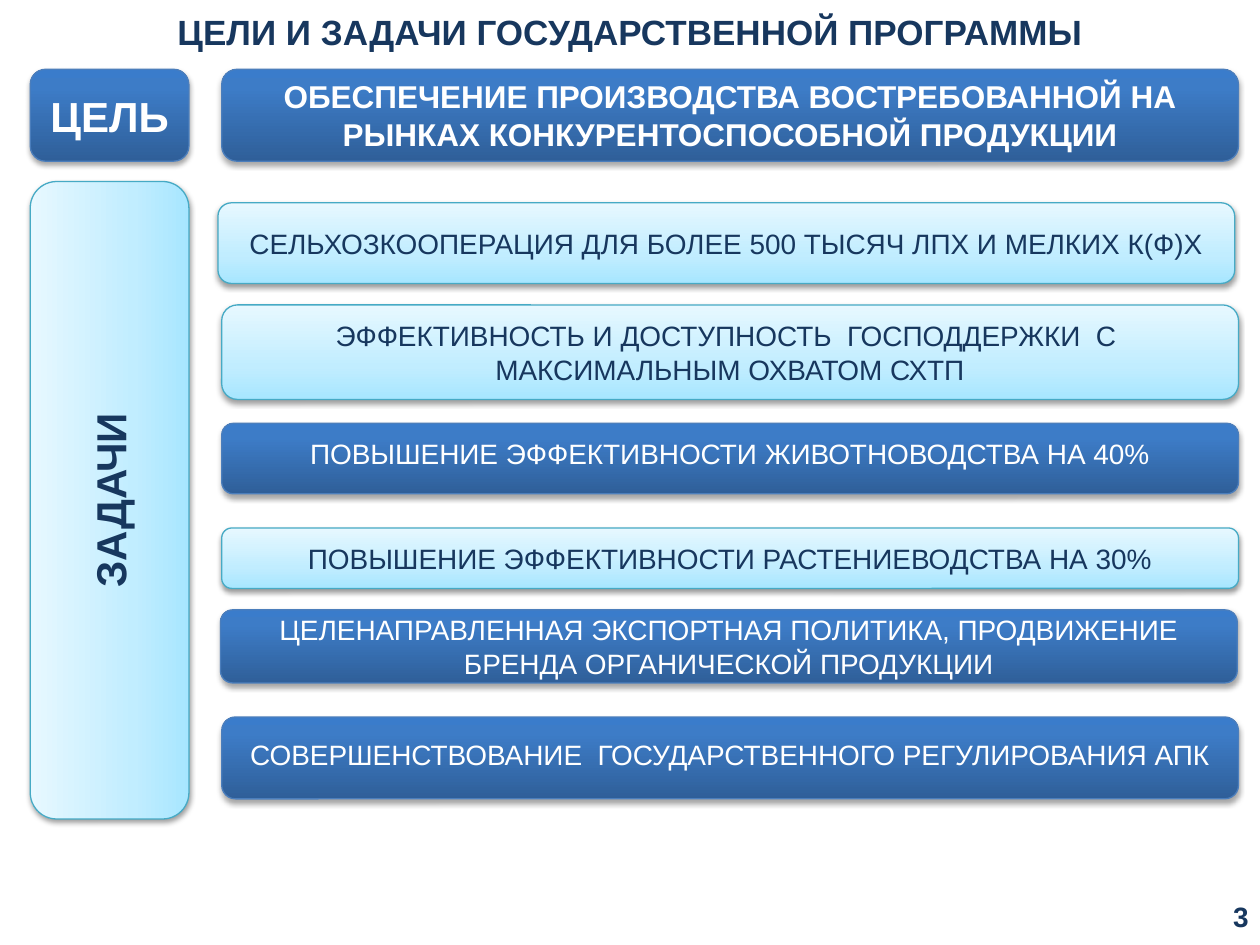
from lxml.etree import SubElement
from pptx import Presentation
from pptx.dml.color import RGBColor
from pptx.enum.shapes import MSO_SHAPE
from pptx.enum.text import MSO_ANCHOR, PP_ALIGN
from pptx.oxml import parse_xml
from pptx.oxml.ns import nsdecls, qn
from pptx.util import Inches, Pt

COLORS = {"navy": "17375E", "white": "FFFFFF", "shadow": "000000"}

# Gradient stops run from the bottom edge to the top edge
STYLES = {
    "blue": {"stops": [(0, "2F5F99"), (80, "3D7CC7"), (100, "3A7CCB")],
             "line": "4B7EBC", "text": COLORS["white"], "alpha": 35, "dist": 1.8},
    "light": {"stops": [(0, "A7E6FF"), (35, "C1EDFF"), (100, "E7F8FF")],
              "line": "46AAC5", "text": COLORS["navy"], "alpha": 38, "dist": 1.6},
}

BAR_LEFT, BAR_WIDTH = 1.76, 8.07
LABEL_LEFT, LABEL_WIDTH = 0.24, 1.26
GOAL_TOP, GOAL_HEIGHT = 0.55, 0.73
TASKS_TOP, TASKS_HEIGHT = 1.44, 5.06

# left, top, height, style, line spacing, text
TASKS = [
    (1.73, 1.61, 0.64, "light", None,
     "СЕЛЬХОЗКООПЕРАЦИЯ ДЛЯ БОЛЕЕ 500 ТЫСЯЧ ЛПХ И МЕЛКИХ К(Ф)Х"),
    (BAR_LEFT, 2.42, 0.75, "light", None,
     "ЭФФЕКТИВНОСТЬ И ДОСТУПНОСТЬ  ГОСПОДДЕРЖКИ  С  МАКСИМАЛЬНЫМ ОХВАТОМ СХТП"),
    (BAR_LEFT, 3.36, 0.56, "blue", Pt(13.7),
     "ПОВЫШЕНИЕ ЭФФЕКТИВНОСТИ ЖИВОТНОВОДСТВА НА 40%"),
    (BAR_LEFT, 4.19, 0.48, "light", None,
     "ПОВЫШЕНИЕ ЭФФЕКТИВНОСТИ РАСТЕНИЕВОДСТВА НА 30%"),
    (1.75, 4.84, 0.58, "blue", 1.01,
     "ЦЕЛЕНАПРАВЛЕННАЯ ЭКСПОРТНАЯ ПОЛИТИКА, ПРОДВИЖЕНИЕ БРЕНДА ОРГАНИЧЕСКОЙ ПРОДУКЦИИ"),
    (BAR_LEFT, 5.69, 0.65, "blue", 0.74,
     "СОВЕРШЕНСТВОВАНИЕ  ГОСУДАРСТВЕННОГО РЕГУЛИРОВАНИЯ АПК"),
]


def write_text(sp, text, size, color, bold=False, align=PP_ALIGN.CENTER):
    tf = sp.text_frame
    tf.word_wrap = True
    tf.vertical_anchor = MSO_ANCHOR.MIDDLE
    p = tf.paragraphs[0]
    p.text = text
    p.alignment = align
    p.font.name = "Arial"
    p.font.size = Pt(size)
    p.font.bold = bold
    p.font.color.rgb = RGBColor.from_string(color)
    return p


def apply_style(sp, style):
    sp.line.color.rgb = RGBColor.from_string(style["line"])
    sp.line.width = Pt(0.75)
    # Gradient fill
    stops = "".join(f'<a:gs pos="{pos * 1000}"><a:srgbClr val="{color}"/></a:gs>'
                    for pos, color in style["stops"])
    spPr = sp._element.spPr
    spPr.find(qn("a:ln")).addprevious(parse_xml(
        f'<a:gradFill rotWithShape="1" {nsdecls("a")}><a:gsLst>{stops}</a:gsLst>'
        '<a:lin ang="16200000" scaled="0"/></a:gradFill>'))
    # Soft shadow below
    sp.shadow.inherit = False
    shadow = SubElement(spPr.find(qn("a:effectLst")), qn("a:outerShdw"),
                        blurRad=str(Pt(3.1)), dist=str(Pt(style["dist"])),
                        dir="5400000", rotWithShape="0")
    color = SubElement(shadow, qn("a:srgbClr"), val=COLORS["shadow"])
    SubElement(color, qn("a:alpha"), val=str(style["alpha"] * 1000))


def add_box(s, left, top, width, height, style_name, text, size=16, bold=False,
            spacing=None, rotation=0):
    sp = s.shapes.add_shape(MSO_SHAPE.ROUNDED_RECTANGLE, Inches(left), Inches(top),
                            Inches(width), Inches(height))
    sp.rotation = rotation
    style = STYLES[style_name]
    apply_style(sp, style)
    p = write_text(sp, text, size, style["text"], bold)
    if spacing is not None:
        p.line_spacing = spacing


def add_label(s, left, top, width, height, text, size, align):
    sp = s.shapes.add_textbox(Inches(left), Inches(top), Inches(width), Inches(height))
    tf = sp.text_frame
    tf.margin_left = tf.margin_right = tf.margin_top = tf.margin_bottom = 0
    return write_text(sp, text, size, COLORS["navy"], True, align)


def main():
    prs = Presentation()
    prs.slide_width, prs.slide_height = Inches(10), Inches(7.5)
    s = prs.slides.add_slide(prs.slide_layouts[6])

    # Title
    add_label(s, 0, 0.08, 10, 0.34, "ЦЕЛИ И ЗАДАЧИ ГОСУДАРСТВЕННОЙ ПРОГРАММЫ",
              20, PP_ALIGN.CENTER)

    # Goal row
    add_box(s, LABEL_LEFT, GOAL_TOP, LABEL_WIDTH, GOAL_HEIGHT, "blue", "ЦЕЛЬ", 24, True)
    add_box(s, BAR_LEFT, GOAL_TOP, BAR_WIDTH, GOAL_HEIGHT, "blue",
            "ОБЕСПЕЧЕНИЕ ПРОИЗВОДСТВА ВОСТРЕБОВАННОЙ НА РЫНКАХ "
            "КОНКУРЕНТОСПОСОБНОЙ ПРОДУКЦИИ", 18, True)

    # Tasks label, turned about its centre to read upwards
    shift = (TASKS_HEIGHT - LABEL_WIDTH) / 2
    add_box(s, LABEL_LEFT - shift, TASKS_TOP + shift, TASKS_HEIGHT, LABEL_WIDTH,
            "light", "ЗАДАЧИ", 24, True, rotation=270)

    # Task bars
    for left, top, height, style_name, spacing, text in TASKS:
        add_box(s, left, top, BAR_WIDTH, height, style_name, text, spacing=spacing)

    # Slide number
    p = add_label(s, 7.58, 7.07, 2.33, 0.4, "3", 16, PP_ALIGN.RIGHT)
    p.space_before = Pt(4.5)

    prs.save("out.pptx")


if __name__ == "__main__":
    main()
